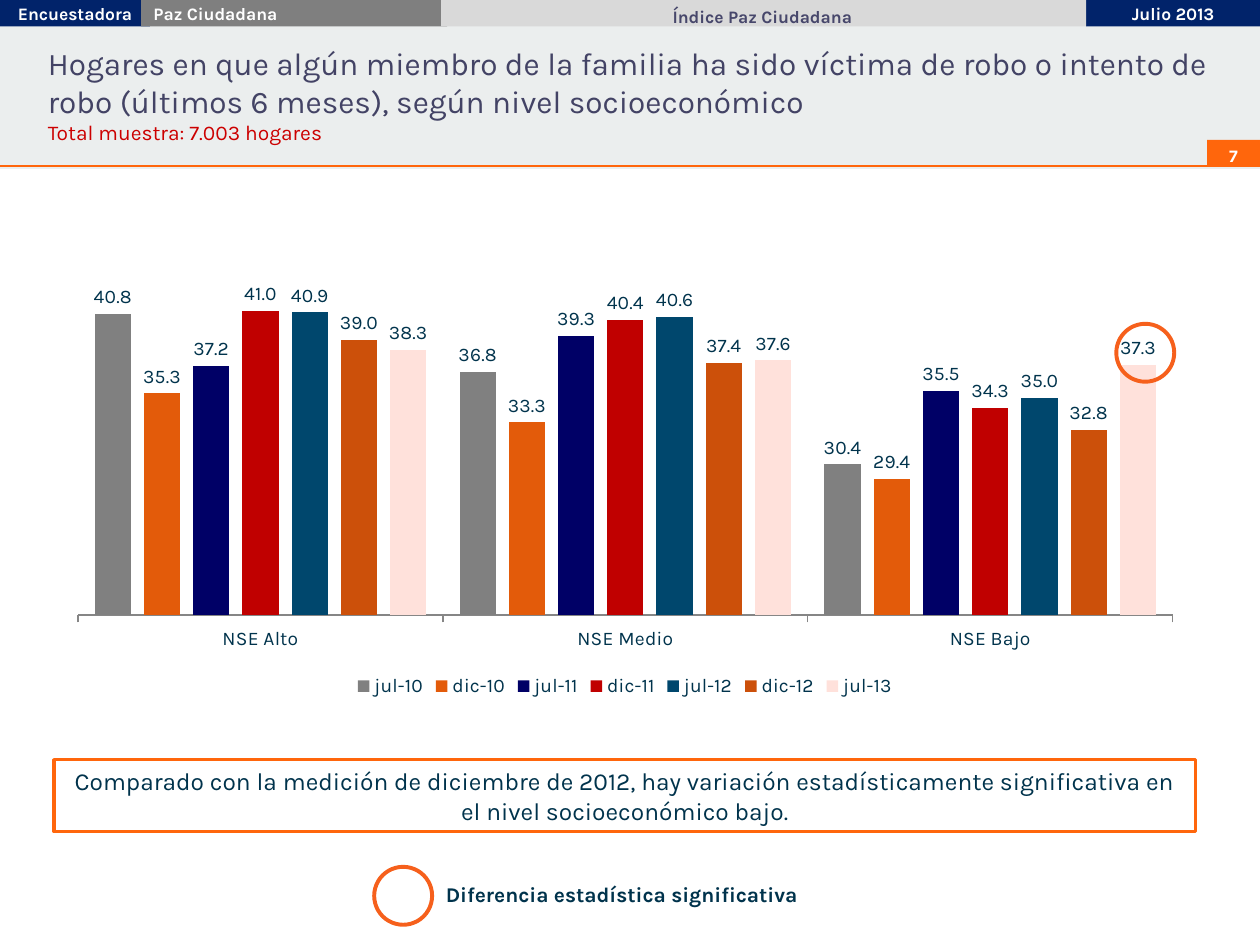
from lxml.etree import SubElement
from pptx import Presentation
from pptx.chart.data import CategoryChartData
from pptx.dml.color import RGBColor
from pptx.enum.chart import XL_CHART_TYPE, XL_LABEL_POSITION, XL_LEGEND_POSITION, XL_TICK_LABEL_POSITION, XL_TICK_MARK
from pptx.enum.shapes import MSO_CONNECTOR, MSO_SHAPE
from pptx.enum.text import MSO_ANCHOR, MSO_AUTO_SIZE, PP_ALIGN
from pptx.oxml.ns import qn
from pptx.util import Inches, Pt

WIDTH, HEIGHT = 10, 7.5
FONT = "Karla"
COLORS = {
    "band": "EBEEEE", "orange": "FF660C", "ring": "F6601C", "navy": "01236A",
    "gray": "7F7F7F", "silver": "D9D9D9", "white": "FFFFFF", "violet": "47476B",
    "title": "434365", "red": "CC0000", "text": "00334C", "axis": "868686",
}
TITLE = [
    ("Hogares en que algún miembro de la familia ha sido víctima de robo o intento de robo "
     "(últimos 6 meses), según nivel socioeconómico", 18, "title"),
    ("Total muestra: 7.003 hogares", 12, "red"),
]
BAR_HEIGHT = 0.21
# left, width, fill, text, alignment
HEADER = [
    (0, 1.19, "navy", "Encuestadora", PP_ALIGN.CENTER),
    (1.12, 2.43, "gray", "Paz Ciudadana", PP_ALIGN.LEFT),
    (8.62, 1.38, "navy", "Julio 2013", PP_ALIGN.CENTER),
    (3.5, 5.12, "silver", "", PP_ALIGN.CENTER),
]
CONCLUSION = ("Comparado con la medición de diciembre de 2012, hay variación "
              "estadísticamente significativa en el nivel socioeconómico bajo.")
CATEGORIES = ["NSE Alto", "NSE Medio", "NSE Bajo"]
SERIES = [
    ("jul-10", "808080", (40.8, 36.8, 30.4)),
    ("dic-10", "E35B0A", (35.3, 33.3, 29.4)),
    ("jul-11", "000066", (37.2, 39.3, 35.5)),
    ("dic-11", "C00000", (41.0, 40.4, 34.3)),
    ("jul-12", "00476D", (40.9, 40.6, 35.0)),
    ("dic-12", "CC500A", (39.0, 37.4, 32.8)),
    ("jul-13", "FFE1DB", (38.3, 37.6, 37.3)),
]
CONTENT_LEFT, CONTENT_WIDTH = 0.43, 9.06
RING_SIZE = 0.46
RINGS = [(2.97, 6.88), (8.86, 2.57)]
PLOT_LAYOUT = {"x": 0.021, "y": 0.019, "w": 0.959, "h": 0.789}


def rgb(name):
    return RGBColor.from_string(COLORS.get(name, name))


def inches(*lengths):
    return [Inches(length) for length in lengths]


def set_values(target, values):
    for name, value in values.items():
        setattr(target, name, value)


def format_font(font, size, color, bold=False):
    set_values(font, {"name": FONT, "size": Pt(size), "bold": bold})
    font.color.rgb = rgb(color)


def write(shape, lines, align=PP_ALIGN.LEFT, anchor=MSO_ANCHOR.MIDDLE, bold=False, wrap=True):
    """Fill a shape with (text, size, color) paragraphs."""
    frame = shape.text_frame
    set_values(frame, {"word_wrap": wrap, "auto_size": MSO_AUTO_SIZE.NONE, "vertical_anchor": anchor})
    for index, (text, size, color) in enumerate(lines):
        paragraph = frame.add_paragraph() if index else frame.paragraphs[0]
        paragraph.alignment = align
        run = paragraph.add_run()
        run.text = text
        format_font(run.font, size, color, bold)


def add_box(slide, place, fill=None, line=None, line_width=1, kind=MSO_SHAPE.RECTANGLE):
    shape = slide.shapes.add_shape(kind, *inches(*place))
    shape.shadow.inherit = False
    if fill:
        shape.fill.solid()
        shape.fill.fore_color.rgb = rgb(fill)
    else:
        shape.fill.background()
    if line:
        shape.line.color.rgb = rgb(line)
        shape.line.width = Pt(line_width)
    else:
        shape.line.fill.background()
    return shape


def add_header(slide):
    add_box(slide, (0, 0, WIDTH, 1.34), "band")
    add_box(slide, (9.58, 1.11, 0.42, 0.2), "orange")
    rule = slide.shapes.add_connector(MSO_CONNECTOR.STRAIGHT, *inches(0, 1.32, WIDTH, 1.32))
    rule.line.color.rgb = rgb("orange")
    rule.line.width = Pt(1)
    SubElement(rule._element.spPr, qn("a:effectLst"))
    for left, width, fill, text, align in HEADER:
        bar = add_box(slide, (left, 0, width, BAR_HEIGHT), fill)
        if text:
            write(bar, [(text, 10, "white")], align, bold=True, wrap=False)
    index_name = slide.shapes.add_textbox(*inches(5.24, 0, 2.13, 0.27))
    write(index_name, [("Índice Paz Ciudadana", 10, "violet")], bold=True)
    number = slide.shapes.add_textbox(*inches(9.58, 1.13, 0.42, 0.21))
    write(number, [("7", 10, "white")], PP_ALIGN.CENTER, bold=True)


def add_title(slide):
    title = slide.shapes.title
    set_values(title, dict(zip(("left", "top", "width", "height"), inches(0.28, 0.3, 9.72, 1.01))))
    write(title, TITLE, anchor=MSO_ANCHOR.TOP)
    slide.shapes._spTree.append(title._element)


def add_victim_chart(slide):
    data = CategoryChartData(number_format="0.0")
    data.categories = CATEGORIES
    for name, _, values in SERIES:
        data.add_series(name, values)
    chart = slide.shapes.add_chart(
        XL_CHART_TYPE.COLUMN_CLUSTERED, *inches(CONTENT_LEFT, 1.94, CONTENT_WIDTH, 3.64), data).chart
    format_font(chart.font, 11, "text")
    set_values(chart, {"has_title": False, "has_legend": True})
    set_values(chart.legend, {"position": XL_LEGEND_POSITION.BOTTOM, "include_in_layout": False})
    set_values(chart.value_axis, {"minimum_scale": 20, "maximum_scale": 45,
                                  "has_major_gridlines": False, "visible": False})
    set_values(chart.category_axis, {"major_tick_mark": XL_TICK_MARK.OUTSIDE,
                                     "tick_label_position": XL_TICK_LABEL_POSITION.LOW})
    chart.category_axis.format.line.color.rgb = rgb("axis")

    plot = chart.plots[0]
    set_values(plot, {"gap_width": 92, "overlap": -36, "vary_by_categories": False, "has_data_labels": True})
    set_values(plot.data_labels, {"show_value": True, "number_format": "0.0",
                                  "number_format_is_linked": False,
                                  "position": XL_LABEL_POSITION.OUTSIDE_END})
    for series, (_, color, _) in zip(plot.series, SERIES):
        series.format.fill.solid()
        series.format.fill.fore_color.rgb = rgb(color)
        series.invert_if_negative = False

    area = chart._chartSpace.chart.plotArea
    for old in area.findall(qn("c:layout")):
        area.remove(old)
    layout = SubElement(area, qn("c:layout"))
    area.insert(0, layout)
    manual = SubElement(layout, qn("c:manualLayout"))
    settings = {"layoutTarget": "inner", "xMode": "edge", "yMode": "edge", **PLOT_LAYOUT}
    for tag, value in settings.items():
        SubElement(manual, qn(f"c:{tag}")).set("val", str(value))


def add_conclusion(slide):
    box = add_box(slide, (CONTENT_LEFT, 6.03, CONTENT_WIDTH, 0.57), line="orange", line_width=2)
    write(box, [(CONCLUSION, 14, "text")], PP_ALIGN.CENTER)
    key = slide.shapes.add_textbox(*inches(3.44, 6.95, 3.15, 0.3))
    write(key, [("Diferencia estadística significativa", 12, "text")], bold=True, wrap=False)
    for left, top in RINGS:
        add_box(slide, (left, top, RING_SIZE, RING_SIZE), line="ring", line_width=2.25, kind=MSO_SHAPE.OVAL)


def main():
    presentation = Presentation()
    presentation.slide_width, presentation.slide_height = inches(WIDTH, HEIGHT)
    slide = presentation.slides.add_slide(presentation.slide_layouts[5])
    add_header(slide)
    add_title(slide)
    add_victim_chart(slide)
    add_conclusion(slide)
    presentation.save("out.pptx")


if __name__ == "__main__":
    main()
